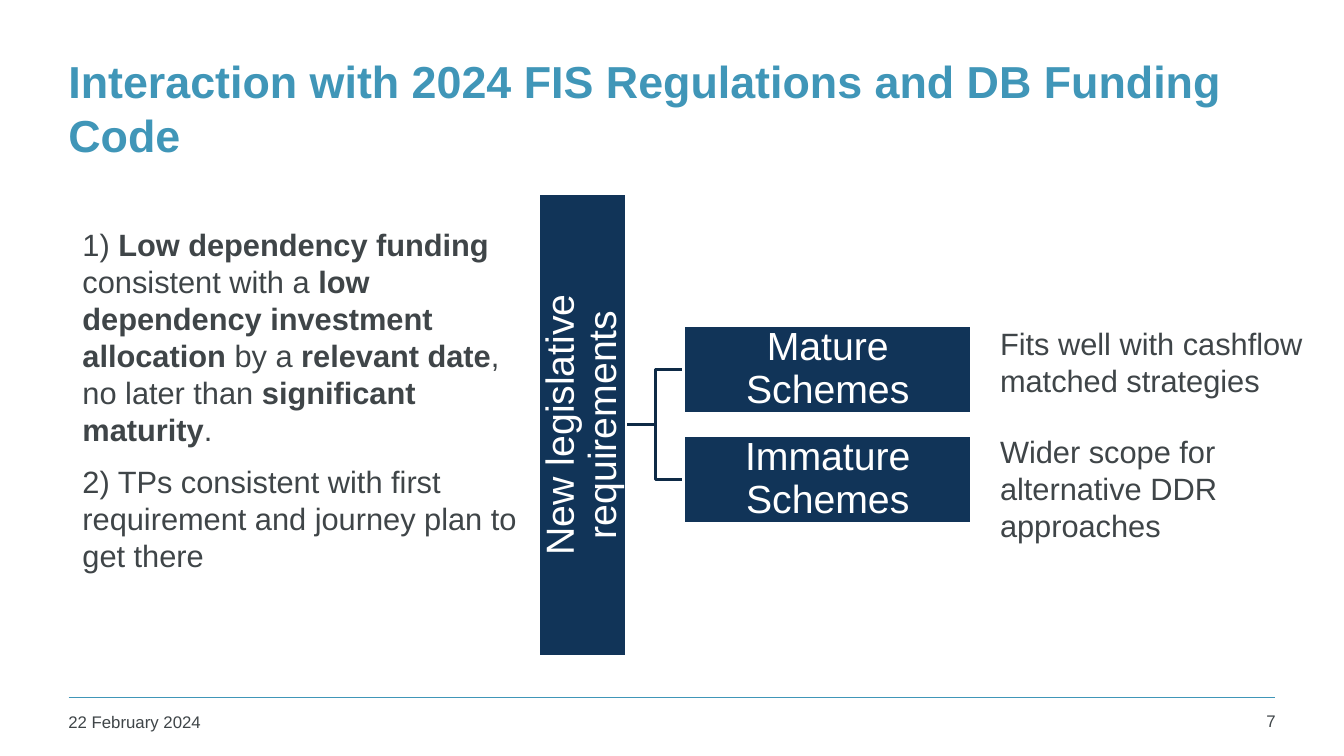
from dataclasses import dataclass

from lxml.etree import SubElement
from pptx import Presentation
from pptx.dml.color import RGBColor
from pptx.enum.shapes import MSO_CONNECTOR, MSO_SHAPE
from pptx.enum.text import MSO_ANCHOR, PP_ALIGN
from pptx.oxml.ns import qn
from pptx.shapes.autoshape import Shape
from pptx.slide import Slide
from pptx.util import Inches, Pt


@dataclass(frozen=True)
class Theme:
    """Colours, font and type sizes of the slide."""
    font: str = "Arial"
    accent: RGBColor = RGBColor(0x40, 0x96, 0xB8)
    ink: RGBColor = RGBColor(0x3F, 0x45, 0x48)
    navy: RGBColor = RGBColor(0x11, 0x34, 0x58)
    branch: RGBColor = RGBColor(0x0E, 0x2A, 0x46)
    white: RGBColor = RGBColor(0xFF, 0xFF, 0xFF)
    title_size: int = 32
    box_size: int = 28
    body_size: int = 22
    footer_size: int = 12


@dataclass(frozen=True)
class Area:
    """Position and size in inches."""
    left: float
    top: float
    width: float
    height: float


@dataclass(frozen=True)
class Run:
    """Words sharing one weight."""
    words: str
    bold: bool = False


@dataclass(frozen=True)
class Passage:
    """A block of plain text and its formatting."""
    area: Area
    paragraphs: list[list[Run]]
    size: int
    color: RGBColor
    gap: float = 0
    align: PP_ALIGN = PP_ALIGN.LEFT
    anchor: MSO_ANCHOR = MSO_ANCHOR.TOP


@dataclass(frozen=True)
class Node:
    """A labelled box of the hierarchy."""
    label: str
    area: Area
    rotation: int = 0


THEME = Theme()
BOX_WIDTH, BOX_HEIGHT = 2.86, 0.87
BRANCH_START, BRANCH_TURN, BRANCH_END = 6.21, 6.5, 6.78
ROOT_MIDDLE = 4.21

ROOT = Node("New legislative requirements", Area(3.48, 3.78, 4.59, BOX_HEIGHT), 270)
SCHEMES = [
    Node(label, Area(BRANCH_END, 3.23 + 1.09 * row, BOX_WIDTH, BOX_HEIGHT))
    for row, label in enumerate(["Mature Schemes", "Immature Schemes"])
]

PASSAGES = [
    Passage(
        Area(0.58, 0.44, 12, 1.25),
        [[Run("Interaction with 2024 FIS Regulations and DB Funding Code", True)]],
        THEME.title_size, THEME.accent, anchor=MSO_ANCHOR.MIDDLE,
    ),
    Passage(
        Area(0.72, 2.19, 4.6, 4.32),
        [
            [
                Run("1) "),
                Run("Low dependency funding ", True),
                Run("consistent with a "),
                Run("low dependency investment allocation ", True),
                Run("by a "),
                Run("relevant date", True),
                Run(", no later than "),
                Run("significant maturity", True),
                Run("."),
            ],
            [Run("2) TPs consistent with first requirement and journey plan to get there")],
        ],
        THEME.body_size, THEME.ink, gap=11,
    ),
    Passage(
        Area(9.82, 3.17, 3.52, 3.59),
        [
            [Run("Fits well with cashflow matched strategies")],
            [Run("Wider scope for alternative DDR approaches")],
        ],
        THEME.body_size, THEME.ink, gap=24.5,
    ),
    Passage(Area(0.58, 7.01, 2.94, 0.36), [[Run("22 February 2024")]],
            THEME.footer_size, THEME.ink),
    Passage(Area(11.81, 7, 0.94, 0.37), [[Run("7")]],
            THEME.footer_size, THEME.ink, align=PP_ALIGN.RIGHT),
]


def bounds(area: Area) -> tuple[Inches, Inches, Inches, Inches]:
    """Return the area as slide lengths."""
    return Inches(area.left), Inches(area.top), Inches(area.width), Inches(area.height)


def write(holder: Shape, passage: Passage, line_spacing: float = 1.0) -> None:
    """Fill a shape with the passage, run by run."""
    frame = holder.text_frame
    frame.word_wrap = True
    frame.vertical_anchor = passage.anchor
    for index, runs in enumerate(passage.paragraphs):
        paragraph = frame.add_paragraph() if index else frame.paragraphs[0]
        paragraph.alignment = passage.align
        paragraph.line_spacing = line_spacing
        paragraph.space_before = Pt(passage.gap if index else 0)
        for part in runs:
            run = paragraph.add_run()
            run.text = part.words
            run.font.name = THEME.font
            run.font.size = Pt(passage.size)
            run.font.bold = part.bold
            run.font.color.rgb = passage.color


def draw_passage(slide: Slide, passage: Passage) -> None:
    """Place a passage in its own text box."""
    write(slide.shapes.add_textbox(*bounds(passage.area)), passage)


def draw_node(slide: Slide, node: Node) -> None:
    """Draw a navy box with a centred label."""
    box = slide.shapes.add_shape(MSO_SHAPE.RECTANGLE, *bounds(node.area))
    box.rotation = node.rotation
    box.shadow.inherit = False
    box.fill.solid()
    box.fill.fore_color.rgb = THEME.navy
    box.line.color.rgb = THEME.white
    box.line.width = Pt(2)
    frame = box.text_frame
    frame.margin_left = frame.margin_right = Inches(0.02)
    frame.margin_top = frame.margin_bottom = Inches(0.02)
    label = Passage(node.area, [[Run(node.label)]], THEME.box_size, THEME.white,
                    align=PP_ALIGN.CENTER, anchor=MSO_ANCHOR.MIDDLE)
    write(box, label, line_spacing=0.9)


def draw_branch(slide: Slide, scheme: Node) -> None:
    """Draw the elbow from the root to a scheme."""
    middle = scheme.area.top + scheme.area.height / 2
    corners = [(BRANCH_TURN, ROOT_MIDDLE), (BRANCH_TURN, middle), (BRANCH_END, middle)]
    builder = slide.shapes.build_freeform(Inches(BRANCH_START), Inches(ROOT_MIDDLE))
    builder.add_line_segments([(Inches(x), Inches(y)) for x, y in corners], close=False)
    elbow = builder.convert_to_shape()
    elbow.shadow.inherit = False
    elbow.fill.background()
    elbow.line.color.rgb = THEME.branch
    elbow.line.width = Pt(2)


def draw_footer_rule(slide: Slide) -> None:
    """Draw the thin line above the footer."""
    rule = slide.shapes.add_connector(
        MSO_CONNECTOR.STRAIGHT, Inches(0.68), Inches(6.92), Inches(12.65), Inches(6.92))
    rule.line.color.rgb = THEME.accent
    rule.line.width = Pt(1)
    SubElement(rule._element.spPr, qn("a:effectLst"))


def main() -> None:
    """Build and save the slide."""
    deck = Presentation()
    deck.slide_width, deck.slide_height = Inches(13.33), Inches(7.5)
    slide = deck.slides.add_slide(deck.slide_layouts[6])
    draw_footer_rule(slide)
    for scheme in SCHEMES:
        draw_branch(slide, scheme)
    for node in [ROOT, *SCHEMES]:
        draw_node(slide, node)
    for passage in PASSAGES:
        draw_passage(slide, passage)
    deck.save("out.pptx")


if __name__ == "__main__":
    main()
